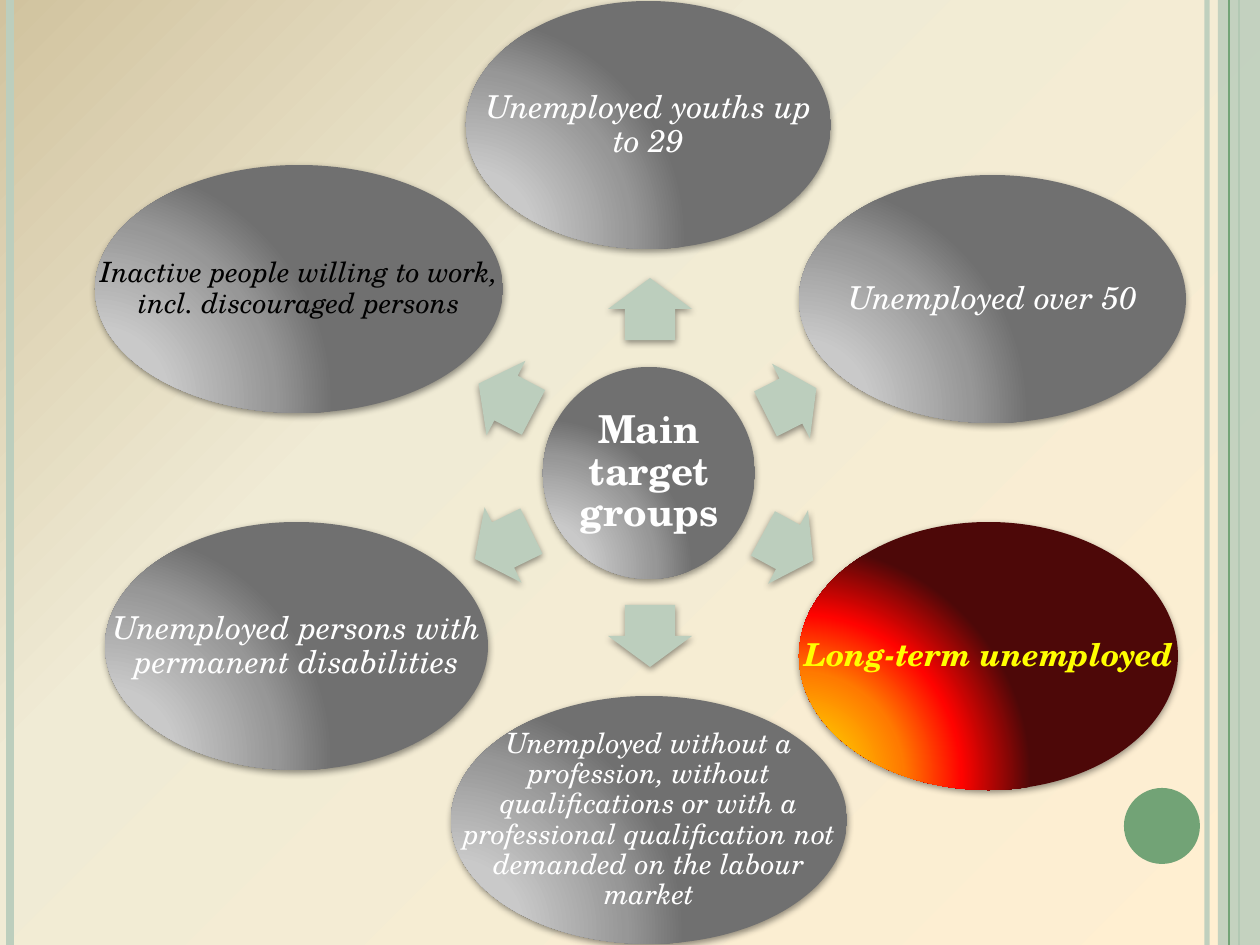
from typing import NamedTuple

import pptx
import pptx.dml.color
import pptx.enum.shapes
import pptx.enum.text
import pptx.oxml
import pptx.oxml.ns
import pptx.util

RGBColor = pptx.dml.color.RGBColor
Shapes = pptx.enum.shapes.MSO_SHAPE

PX_PER_INCH = 126
SLIDE_WIDTH, SLIDE_HEIGHT = 1260, 945
FONT = "TeX Gyre Schola"

SAGE = RGBColor(0xBC, 0xCE, 0xBD)
GREEN = RGBColor(0x72, 0xA3, 0x76)
WHITE = RGBColor(0xFF, 0xFF, 0xFF)
BLACK = RGBColor(0x00, 0x00, 0x00)
YELLOW = RGBColor(0xFF, 0xFF, 0x00)


class Gradient(NamedTuple):
    stops: tuple[tuple[int, RGBColor], ...]  # percent, colour
    focus: tuple[int, int, int, int]  # left, top, right, bottom in percent


class Rule(NamedTuple):
    x: int
    color: RGBColor
    width: float
    opacity: int = 100


class Arrow(NamedTuple):
    center_x: int
    center_y: int
    length: int
    rotation: float


LOWER_LEFT = (5, 100, 120, 10)
CREAM = Gradient(((0, RGBColor(0xFF, 0xEF, 0xD1)), (65, RGBColor(0xF0, 0xEB, 0xD5)),
                  (100, RGBColor(0xD1, 0xC3, 0x9F))), (100, 100, 0, 0))
GRAY = Gradient(((0, RGBColor(0xD1, 0xD1, 0xD1)), (30, RGBColor(0xC9, 0xC9, 0xC9)),
                 (75, RGBColor(0x97, 0x97, 0x97)), (100, RGBColor(0x70, 0x70, 0x70))), LOWER_LEFT)
FIRE = Gradient(((0, RGBColor(0xFF, 0xF2, 0x00)), (45, RGBColor(0xFF, 0x7A, 0x00)),
                 (70, RGBColor(0xFF, 0x03, 0x00)), (100, RGBColor(0x4D, 0x08, 0x08))), LOWER_LEFT)


class Bubble(NamedTuple):
    text: str
    left: int
    top: int
    width: int
    height: int = 248
    size: int = 18
    color: RGBColor = WHITE
    bold: bool = False
    italic: bool = True
    gradient: Gradient = GRAY


RULES = [Rule(1207, SAGE, 3, 93), Rule(10, SAGE, 4.5), Rule(1239, GREEN, 1.5)]
INNER_RULE = Rule(1229, GREEN, 0.75)

BUBBLES = [
    Bubble("Main target groups", 543, 367, 212, 212, size=22, bold=True, italic=False),
    Bubble("Unemployed youths up to 29", 466, 1, 365),
    Bubble("Unemployed over 50", 799, 175, 387),
    Bubble("Long-term unemployed", 799, 522, 379, 268, color=YELLOW, bold=True, gradient=FIRE),
    Bubble("Unemployed without a profession, without qualifications or with a professional "
           "qualification not demanded on the labour market", 451, 696, 396, size=16),
    Bubble("Unemployed persons with permanent disabilities", 105, 522, 383),
    Bubble("Inactive people willing to work, incl. discouraged persons", 95, 165, 408,
           size=16, color=BLACK),
]

ARROW_BREADTH = 84
ARROWS = [
    Arrow(650, 309, 62, 270),
    Arrow(791, 401, 57, 333.1),
    Arrow(788, 547, 57, 28.5),
    Arrow(650, 636, 62, 90),
    Arrow(503, 545, 63, 153.9),
    Arrow(506, 398, 62, 207.6),
]


def px(length: float) -> pptx.util.Emu:
    return pptx.util.Emu(round(length * 914400 / PX_PER_INCH))


def make_element(xml: str):
    """Parse a drawing element whose root tag ends with the marker NS."""
    return pptx.oxml.parse_xml(xml.replace("NS", pptx.oxml.ns.nsdecls("a"), 1))


def apply_gradient(owner, gradient: Gradient) -> None:
    """Swap the owner's solid fill for a circular gradient."""
    owner_fill = owner.element.xpath(".//a:solidFill")[0]
    stops = "".join(f'<a:gs pos="{position * 1000}"><a:srgbClr val="{color}"/></a:gs>'
                    for position, color in gradient.stops)
    left, top, right, bottom = (side * 1000 for side in gradient.focus)
    owner_fill.getparent().replace(owner_fill, make_element(
        f'<a:gradFill NS rotWithShape="1"><a:gsLst>{stops}</a:gsLst><a:path path="circle">'
        f'<a:fillToRect l="{left}" t="{top}" r="{right}" b="{bottom}"/></a:path></a:gradFill>'))


def set_opacity(shape, percent: int) -> None:
    color = shape.element.xpath(".//a:solidFill/a:srgbClr")[0]
    color.append(make_element(f'<a:alpha NS val="{percent * 1000}"/>'))


def add_plain_shape(slide, kind, left: float, top: float, width: int, height: int,
                    color: RGBColor, shadow: bool = False):
    shape = slide.shapes.add_shape(kind, px(left), px(top), px(width), px(height))
    shape.fill.solid()
    shape.fill.fore_color.rgb = color
    shape.line.fill.background()
    shape.shadow.inherit = False
    if shadow:
        shape.element.xpath("./p:spPr/a:effectLst")[0].append(make_element(
            '<a:outerShdw NS blurRad="50800" dist="20320" dir="5400000" rotWithShape="0">'
            '<a:srgbClr val="000000"><a:alpha val="42000"/></a:srgbClr></a:outerShdw>'))
    return shape


def add_rule(slide, rule: Rule) -> None:
    connector = slide.shapes.add_connector(pptx.enum.shapes.MSO_CONNECTOR.STRAIGHT,
                                           px(rule.x), px(0), px(rule.x), px(SLIDE_HEIGHT))
    connector.line.color.rgb = rule.color
    connector.line.width = pptx.util.Pt(rule.width)
    connector.element.spPr.append(make_element("<a:effectLst NS/>"))
    if rule.opacity < 100:
        set_opacity(connector, rule.opacity)


def add_bubble(slide, bubble: Bubble) -> None:
    frame = (bubble.left, bubble.top, bubble.width, bubble.height)
    ellipse = add_plain_shape(slide, Shapes.OVAL, *frame, color=SAGE, shadow=True)
    apply_gradient(ellipse, bubble.gradient)

    # The label spans the full frame, wider than the ellipse's own text area
    text_frame = slide.shapes.add_textbox(*map(px, frame)).text_frame
    text_frame.word_wrap = True
    text_frame.vertical_anchor = pptx.enum.text.MSO_ANCHOR.MIDDLE
    inset = px(3)
    text_frame.margin_left = text_frame.margin_right = inset
    text_frame.margin_top = text_frame.margin_bottom = inset
    paragraph = text_frame.paragraphs[0]
    paragraph.text = bubble.text
    paragraph.alignment = pptx.enum.text.PP_ALIGN.CENTER
    paragraph.line_spacing = 0.9
    paragraph.font.name = FONT
    paragraph.font.size = pptx.util.Pt(bubble.size)
    paragraph.font.color.rgb = bubble.color
    paragraph.font.bold = bubble.bold
    paragraph.font.italic = bubble.italic


def add_arrow(slide, arrow: Arrow) -> None:
    shape = add_plain_shape(slide, Shapes.RIGHT_ARROW, arrow.center_x - arrow.length / 2,
                            arrow.center_y - ARROW_BREADTH / 2, arrow.length, ARROW_BREADTH,
                            SAGE, shadow=True)
    shape.adjustments[0] = 0.6
    shape.adjustments[1] = 0.5
    shape.rotation = arrow.rotation


def main() -> None:
    presentation = pptx.Presentation()
    presentation.slide_width = px(SLIDE_WIDTH)
    presentation.slide_height = px(SLIDE_HEIGHT)
    slide = presentation.slides.add_slide(presentation.slide_layouts[6])

    # Background
    slide.background.fill.solid()
    slide.background.fill.fore_color.rgb = SAGE
    apply_gradient(slide, CREAM)

    # Side decoration
    for rule in RULES:
        add_rule(slide, rule)
    band = add_plain_shape(slide, Shapes.RECTANGLE, 1218, 0, 42, SLIDE_HEIGHT, SAGE)
    set_opacity(band, 87)
    add_rule(slide, INNER_RULE)
    add_plain_shape(slide, Shapes.OVAL, 1124, 788, 76, 76, GREEN)

    # Hub, arrows and target groups
    for arrow in ARROWS:
        add_arrow(slide, arrow)
    for bubble in BUBBLES:
        add_bubble(slide, bubble)

    presentation.save("out.pptx")


if __name__ == "__main__":
    main()
